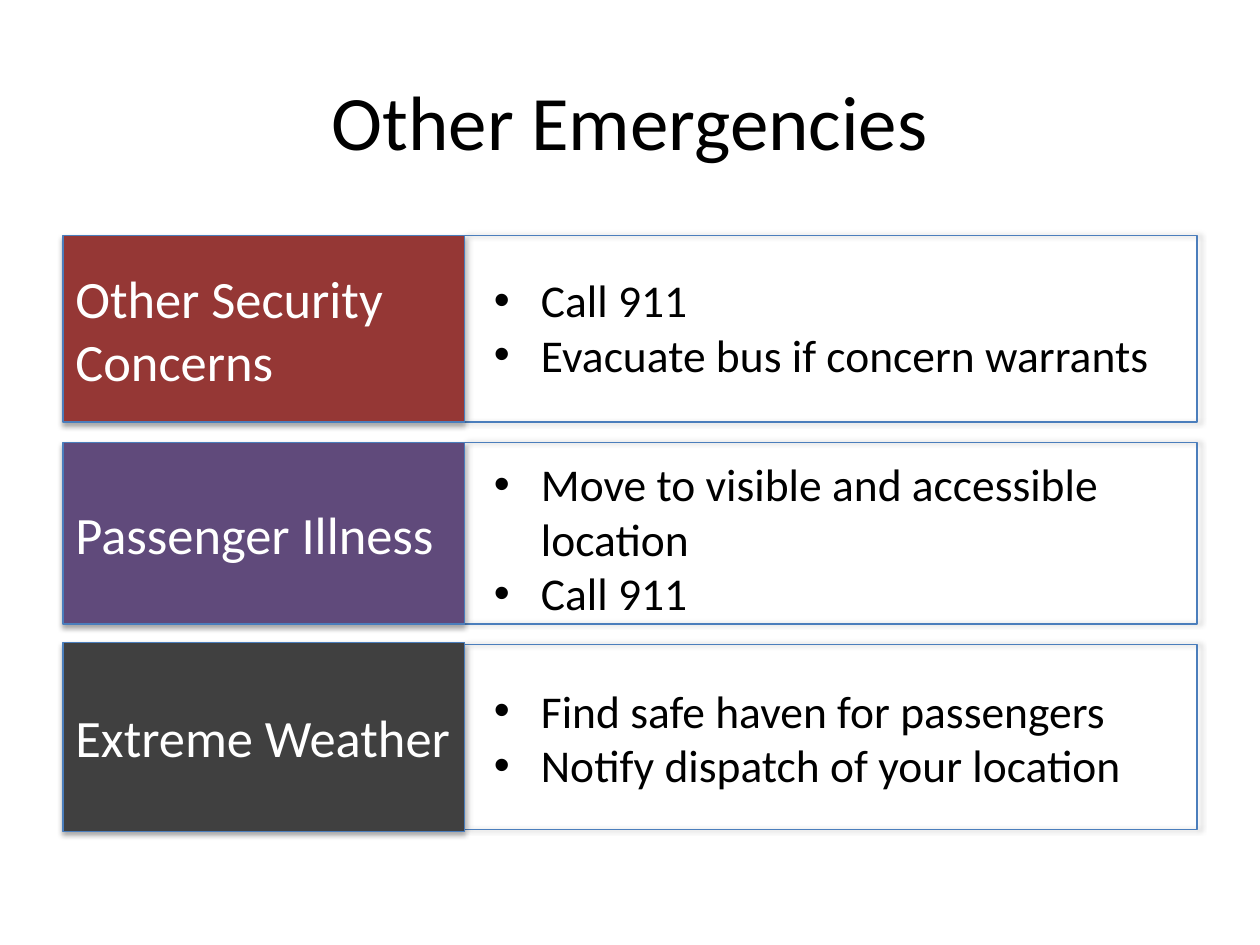
from dataclasses import dataclass

from lxml import etree
from pptx import Presentation
from pptx.dml.color import RGBColor
from pptx.enum.shapes import MSO_SHAPE
from pptx.enum.text import MSO_ANCHOR, MSO_AUTO_SIZE, PP_ALIGN
from pptx.oxml.ns import qn
from pptx.util import Cm, Pt

RECT = MSO_SHAPE.RECTANGLE
TOP, MIDDLE = MSO_ANCHOR.TOP, MSO_ANCHOR.MIDDLE
LEFT, CENTER = PP_ALIGN.LEFT, PP_ALIGN.CENTER
FIXED = MSO_AUTO_SIZE.NONE


@dataclass(frozen=True)
class Theme:
    font: str = "Calibri"
    black: str = "000000"
    white: str = "FFFFFF"
    edge: str = "4B7EBC"
    red: str = "953735"
    purple: str = "604A7B"
    gray: str = "404040"
    title: int = 44
    label: int = 30
    item: int = 26


THEME = Theme()
MARGIN, LABEL_W, FRAME_W = 1.27, 8.1, 14.76
FRAME_X = MARGIN + LABEL_W
LIST_X, LIST_W = FRAME_X + 0.33, 14.43

# Per row: label, fill, label top and height, frame top and height,
# list top and height, list items
ROWS = [
    ("Other Security Concerns", THEME.red, (4.75, 3.76), (4.75, 3.76),
     (5.36, 2.49), ["Call 911", "Evacuate bus if concern warrants"]),
    ("Passenger Illness", THEME.purple, (8.92, 3.66), (8.92, 3.66),
     (9.07, 3.58), ["Move to visible and accessible location", "Call 911"]),
    ("Extreme Weather", THEME.gray, (12.95, 3.81), (13, 3.73),
     (13.64, 2.49),
     ["Find safe haven for passengers", "Notify dispatch of your location"]),
]


def place(shape, x, y, w, h):
    shape.left, shape.top, shape.width, shape.height = map(Cm, (x, y, w, h))


def add_bullet(par):
    props = par._p.get_or_add_pPr()
    props.set("marL", str(Cm(0.95)))
    props.set("indent", str(-Cm(0.95)))
    etree.SubElement(props, qn("a:buFont"), typeface="Arial")
    etree.SubElement(props, qn("a:buChar"), char="•")


def write(shape, lines, size, color=THEME.black, align=LEFT,
          anchor=MIDDLE, bullet=False):
    frame = shape.text_frame
    frame.word_wrap = True
    frame.auto_size = FIXED
    frame.vertical_anchor = anchor
    frame.text = "\n".join(lines)
    for par in frame.paragraphs:
        par.alignment = align
        par.space_before = Pt(0)
        if bullet:
            add_bullet(par)
        font = par.runs[0].font
        font.name, font.size, font.bold = THEME.font, Pt(size), False
        font.color.rgb = RGBColor.from_string(color)


def add_shadow(shape, angle):
    shape.shadow.inherit = False
    effects = shape._element.spPr.find(qn("a:effectLst"))
    outer = etree.SubElement(
        effects, qn("a:outerShdw"), blurRad=str(Pt(3.1)), dist=str(Pt(1.8)),
        dir=str(angle * 60000), rotWithShape="0")
    tint = etree.SubElement(outer, qn("a:srgbClr"), val=THEME.black)
    etree.SubElement(tint, qn("a:alpha"), val="35000")


def add_box(slide, x, y, w, h, fill=None, angle=0):
    box = slide.shapes.add_shape(RECT, *map(Cm, (x, y, w, h)))
    if fill:
        box.fill.solid()
        box.fill.fore_color.rgb = RGBColor.from_string(fill)
    else:
        box.fill.background()
    box.line.color.rgb = RGBColor.from_string(THEME.edge)
    box.line.width = Pt(0.75)
    add_shadow(box, angle)
    return box


def main():
    deck = Presentation()
    deck.slide_width, deck.slide_height = Cm(25.4), Cm(19.05)
    # The comparison layout has a title and four bodies
    slide = deck.slides.add_slide(deck.slide_layouts[4])
    title, *bodies = slide.placeholders
    spare = bodies.pop()._element
    spare.getparent().remove(spare)

    # Title
    place(title, MARGIN, 1.07, 22.86, 2.67)
    write(title, ["Other Emergencies"], THEME.title, align=CENTER)

    # Coloured label, outlined frame and list in each row
    for body, row in zip(bodies, ROWS):
        name, fill, label_y, frame_y, list_y, items = row
        add_box(slide, FRAME_X, frame_y[0], FRAME_W, frame_y[1])
        label = add_box(slide, MARGIN, label_y[0], LABEL_W, label_y[1],
                        fill=fill, angle=90)
        write(label, [name], THEME.label, color=THEME.white)
        place(body, LIST_X, list_y[0], LIST_W, list_y[1])
        write(body, items, THEME.item, anchor=TOP, bullet=True)

    deck.save("out.pptx")


if __name__ == "__main__":
    main()
